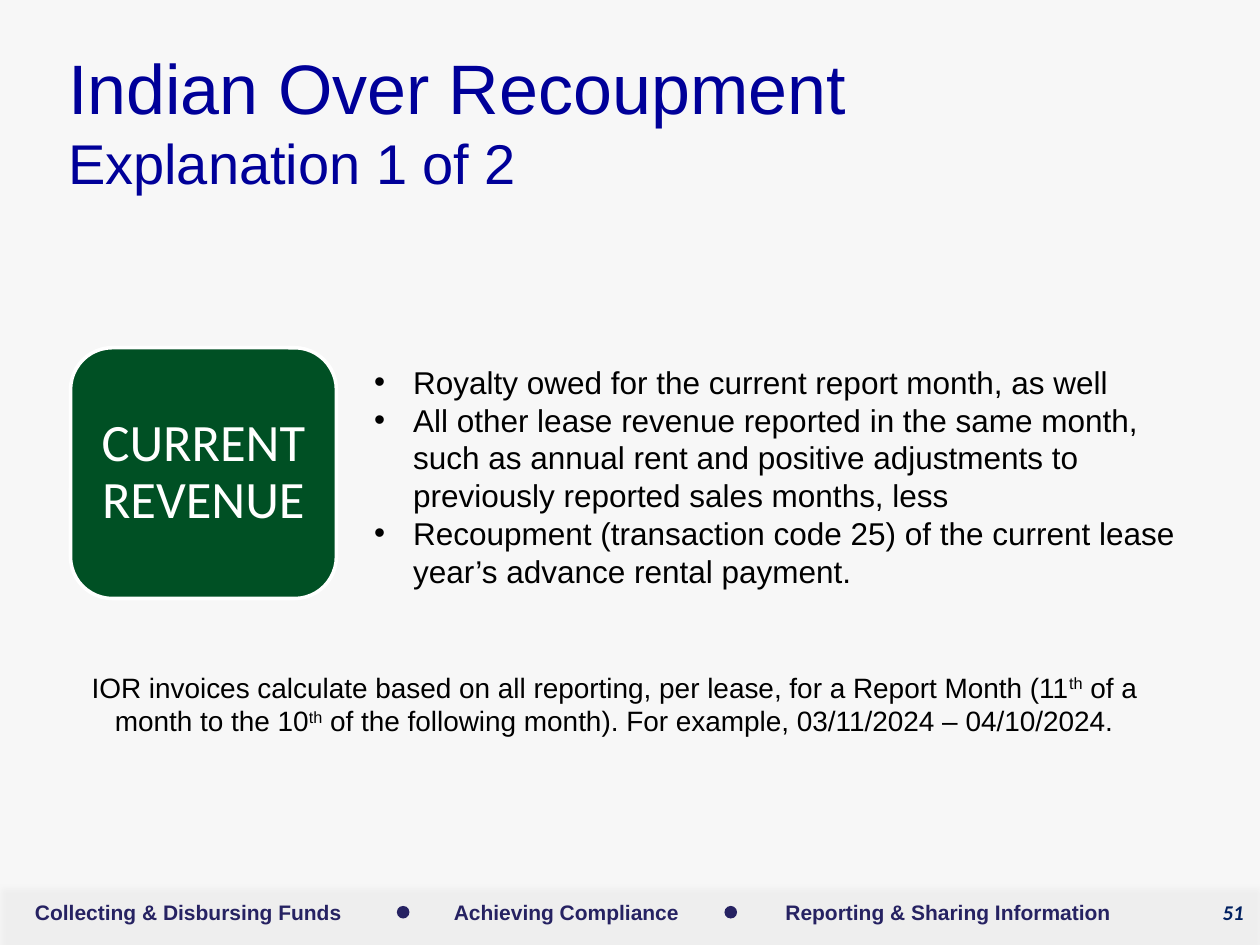
import pptx
import pptx.util
import pptx.dml.color
import pptx.enum.shapes
import pptx.enum.text
import pptx.oxml
import pptx.oxml.ns

# Content
TITLE = [("Indian Over Recoupment", 40), ("Explanation 1 of 2", 32)]
LABEL = "CURRENT REVENUE"
POINTS = [
    "Royalty owed for the current report month, as well",
    "All other lease revenue reported in the same month, such as annual rent "
    "and positive adjustments to previously reported sales months, less",
    "Recoupment (transaction code 25) of the current lease year’s advance rental payment.",
]
# Odd parts are superscript
NOTE = [
    "IOR invoices calculate based on all reporting, per lease, for a Report Month (11",
    "th", " of a month to the 10", "th",
    " of the following month). For example, 03/11/2024 – 04/10/2024.",
]
# Footer text, left, width
GOALS = [
    ("Collecting & Disbursing Funds", 0.07, 2.85),
    ("Achieving Compliance", 3.47, 2.05),
    ("Reporting & Sharing Information", 6.08, 2.89),
]
DOTS = [3.15, 5.75]
PAGE = "51"

# Theme and layout
THEME = {
    "back": "F7F7F7", "title": "000099", "body": "000000", "card": "005024",
    "white": "FFFFFF", "foot": "262262", "page": "002060",
    "sans": "Arial", "alt": "Calibri",
    "label": 30, "point": 18, "note": 16, "small": 12,
}
WIDE, HIGH = 10, 7.5
BAR = 0.5
TOP = HIGH - BAR
ROW = TOP + 0.09

ALIGN = pptx.enum.text.PP_ALIGN
ANCHOR = pptx.enum.text.MSO_ANCHOR
KIND = pptx.enum.shapes.MSO_SHAPE
Inches = pptx.util.Inches


def color(name):
    return pptx.dml.color.RGBColor.from_string(THEME[name])


def style(font, size, tint, face="sans", bold=False):
    font.size = pptx.util.Pt(size)
    font.color.rgb = color(tint)
    font.name = THEME[face]
    font.bold = bold


def element(text):
    return pptx.oxml.parse_xml(text.replace(">", f" {pptx.oxml.ns.nsdecls('a')}>", 1))


def shape(slide, kind, box, fill):
    item = slide.shapes.add_shape(kind, *map(Inches, box))
    item.shadow.inherit = False
    item.fill.solid()
    item.fill.fore_color.rgb = color(fill)
    item.line.fill.background()
    return item


def text(slide, box, parts, size, tint, align=ALIGN.CENTER, anchor=ANCHOR.MIDDLE, **look):
    """One paragraph made of the given runs."""
    frame = slide.shapes.add_textbox(*map(Inches, box)).text_frame
    frame.word_wrap = True
    frame.vertical_anchor = anchor
    para = frame.paragraphs[0]
    para.alignment = align
    for part in parts:
        run = para.add_run()
        run.text = part
        style(run.font, size, tint, **look)
    return para


def footer(slide):
    bar = shape(slide, KIND.RECTANGLE, (0, TOP, WIDE, BAR), "white")
    props = bar.element.spPr
    tone = props.find(".//" + pptx.oxml.ns.qn("a:srgbClr"))
    tone.append(element('<a:alpha val="10000"></a:alpha>'))
    effect = props.find(pptx.oxml.ns.qn("a:effectLst"))
    effect.append(element(
        '<a:outerShdw blurRad="50800" dist="38100" dir="5400000" rotWithShape="0">'
        '<a:srgbClr val="000000"><a:alpha val="40000"/></a:srgbClr></a:outerShdw>'))
    for goal, left, width in GOALS:
        text(slide, (left, ROW, width, 0.3), [goal], THEME["small"], "foot", bold=True)
    for left in DOTS:
        shape(slide, KIND.OVAL, (left, ROW + 0.1, 0.1, 0.1), "foot")
    para = text(slide, (9.45, ROW, 0.52, 0.4), [PAGE], THEME["small"], "page",
                ALIGN.RIGHT, ANCHOR.TOP, face="alt", bold=True)
    para.runs[0].font.italic = True


def heading(slide):
    title = slide.shapes.title
    title.left, title.top, title.width, title.height = map(Inches, (0.44, 0.33, 7.89, 1.25))
    frame = title.text_frame
    frame.text = "\v".join(line for line, _ in TITLE)
    frame.auto_size = pptx.enum.text.MSO_AUTO_SIZE.NONE
    frame.vertical_anchor = ANCHOR.MIDDLE
    para = frame.paragraphs[0]
    para.alignment = ALIGN.LEFT
    for run, (_, size) in zip(para.runs, TITLE):
        style(run.font, size, "title")


def bullets(slide):
    box = slide.shapes.add_textbox(*map(Inches, (2.87, 2.8, 6.58, 1.96)))
    frame = box.text_frame
    frame.word_wrap = True
    frame.vertical_anchor = ANCHOR.MIDDLE
    frame.text = "\n".join(POINTS)
    indent = Inches(0.31)
    for para in frame.paragraphs:
        props = para._p.get_or_add_pPr()
        props.set("marL", str(indent))
        props.set("indent", str(-indent))
        props.append(element('<a:buFont typeface="Arial"></a:buFont>'))
        props.append(element('<a:buChar char="•"></a:buChar>'))
        style(para.runs[0].font, THEME["point"], "body")


def card(slide):
    item = shape(slide, KIND.ROUNDED_RECTANGLE, (0.56, 2.76, 2.11, 1.99), "card")
    item.line.color.rgb = color("white")
    item.line.width = pptx.util.Pt(2)
    frame = item.text_frame
    frame.word_wrap = True
    frame.margin_left = frame.margin_right = Inches(0.12)
    frame.margin_top = frame.margin_bottom = Inches(0.06)
    frame.vertical_anchor = ANCHOR.MIDDLE
    frame.text = LABEL
    para = frame.paragraphs[0]
    para.alignment = ALIGN.CENTER
    para.line_spacing = 0.9
    style(para.runs[0].font, THEME["label"], "white", "alt")


def main():
    deck = pptx.Presentation()
    deck.slide_width, deck.slide_height = Inches(WIDE), Inches(HIGH)
    slide = deck.slides.add_slide(deck.slide_layouts[5])
    slide.background.fill.solid()
    slide.background.fill.fore_color.rgb = color("back")

    footer(slide)
    heading(slide)
    bullets(slide)
    card(slide)

    # Closing note with raised ordinals
    note = text(slide, (0.5, 4.67, 8.75, 1.83), NOTE, THEME["note"], "body")
    for run in note.runs[1::2]:
        run.font._element.set("baseline", "30000")

    deck.save("out.pptx")


if __name__ == "__main__":
    main()
